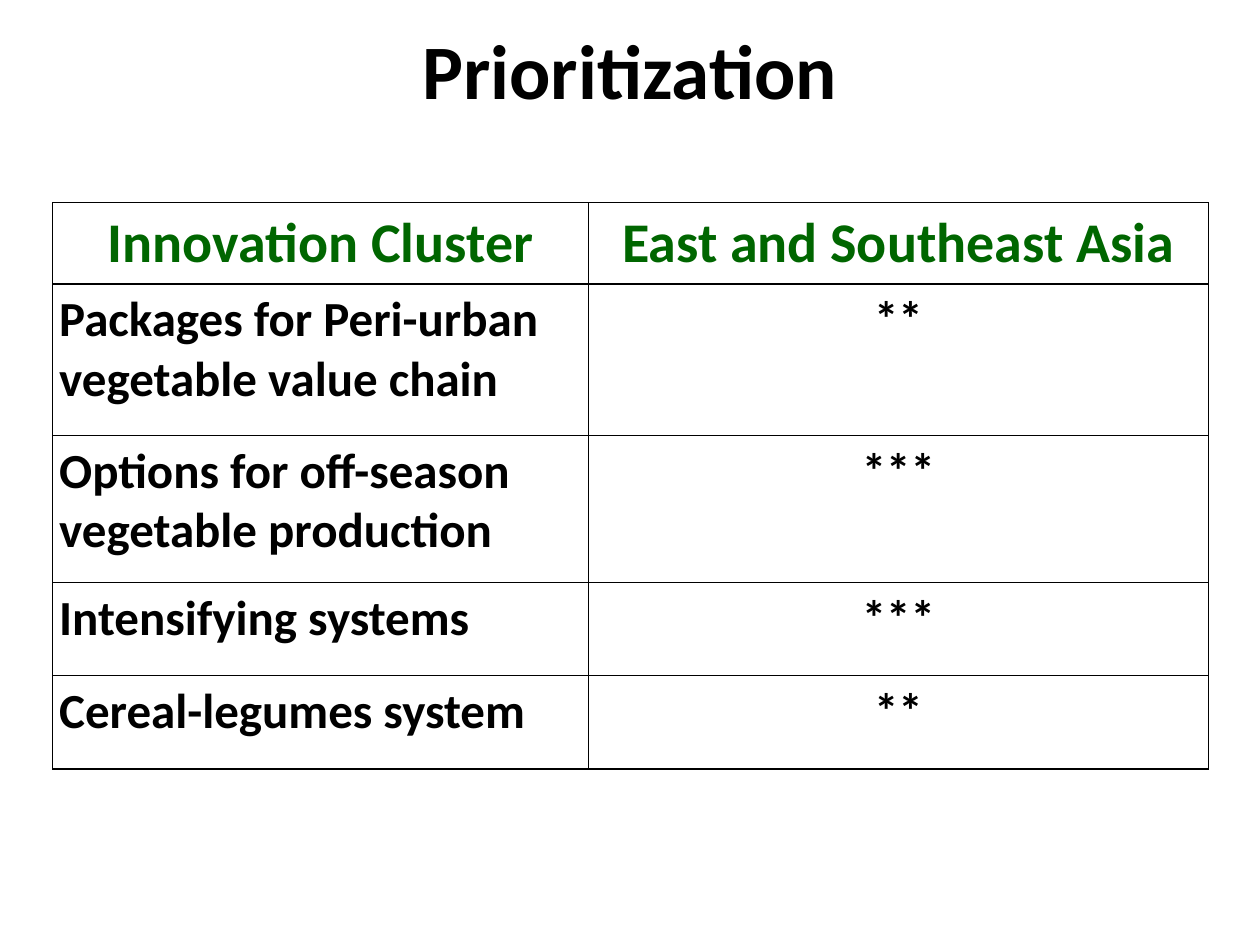
import dataclasses

import lxml.etree
import pptx
import pptx.dml.color
import pptx.enum.text
import pptx.oxml.ns
import pptx.table
import pptx.text.text
import pptx.util

Inches = pptx.util.Inches
ALIGN = pptx.enum.text.PP_ALIGN
MIDDLE = pptx.enum.text.MSO_ANCHOR.MIDDLE
COLORS = {"ink": "000000", "head": "006600"}
WIDTHS = (4.25, 4.92)


@dataclasses.dataclass
class Row:
    name: str
    mark: str
    height: float
    size: int = 28
    color: str = "ink"
    align: ALIGN = ALIGN.LEFT


ROWS = (
    Row("Innovation Cluster", "East and Southeast Asia", 0.64, 32, "head", ALIGN.CENTER),
    Row("Packages for Peri-urban vegetable value chain", "**", 1.2),
    Row("Options for off-season vegetable production", "***", 1.17),
    Row("Intensifying systems", "***", 0.74),
    Row("Cereal-legumes system", "**", 0.74),
)


def write(frame: pptx.text.text.TextFrame, text: str, *, size: int,
          color: str = "ink", align: ALIGN = ALIGN.CENTER) -> None:
    frame.word_wrap = True
    line = frame.paragraphs[0]
    line.alignment = align
    run = line.add_run()
    run.text = text
    run.font.name = "Calibri"
    run.font.size = pptx.util.Pt(size)
    run.font.bold = True
    run.font.color.rgb = pptx.dml.color.RGBColor.from_string(COLORS[color])


def border(cell: pptx.table._Cell) -> None:
    props = cell._tc.get_or_add_tcPr()
    qn = pptx.oxml.ns.qn
    for spot, side in enumerate(("lnL", "lnR", "lnT", "lnB")):
        edge = lxml.etree.Element(qn(f"a:{side}"), w=str(pptx.util.Pt(0.75)))
        fill = lxml.etree.SubElement(edge, qn("a:solidFill"))
        lxml.etree.SubElement(fill, qn("a:srgbClr"), val=COLORS["ink"])
        props.insert(spot, edge)


def fill_cell(cell: pptx.table._Cell, text: str, row: Row, align: ALIGN) -> None:
    cell.margin_left = cell.margin_right = Inches(0.05)
    cell.margin_top = cell.margin_bottom = Inches(0.05)
    cell.fill.background()
    border(cell)
    write(cell.text_frame, text, size=row.size, color=row.color, align=align)


def main() -> None:
    """Build the prioritization slide."""
    deck = pptx.Presentation()
    deck.slide_width, deck.slide_height = Inches(10), Inches(7.5)
    slide = deck.slides.add_slide(deck.slide_layouts[6])

    high = sum(row.height for row in ROWS)
    grid = slide.shapes.add_table(
        len(ROWS), len(WIDTHS), Inches(0.42), Inches(1.61),
        Inches(sum(WIDTHS)), Inches(high)).table
    grid.first_row = grid.horz_banding = False
    for column, width in zip(grid.columns, WIDTHS):
        column.width = Inches(width)
    for spot, row in enumerate(ROWS):
        grid.rows[spot].height = Inches(row.height)
        fill_cell(grid.cell(spot, 0), row.name, row, row.align)
        fill_cell(grid.cell(spot, 1), row.mark, row, ALIGN.CENTER)

    title = slide.shapes.add_textbox(
        Inches(0.5), Inches(-0.08), Inches(9), Inches(1.25)).text_frame
    title.vertical_anchor = MIDDLE
    write(title, "Prioritization", size=44)
    deck.save("out.pptx")


if __name__ == "__main__":
    main()
